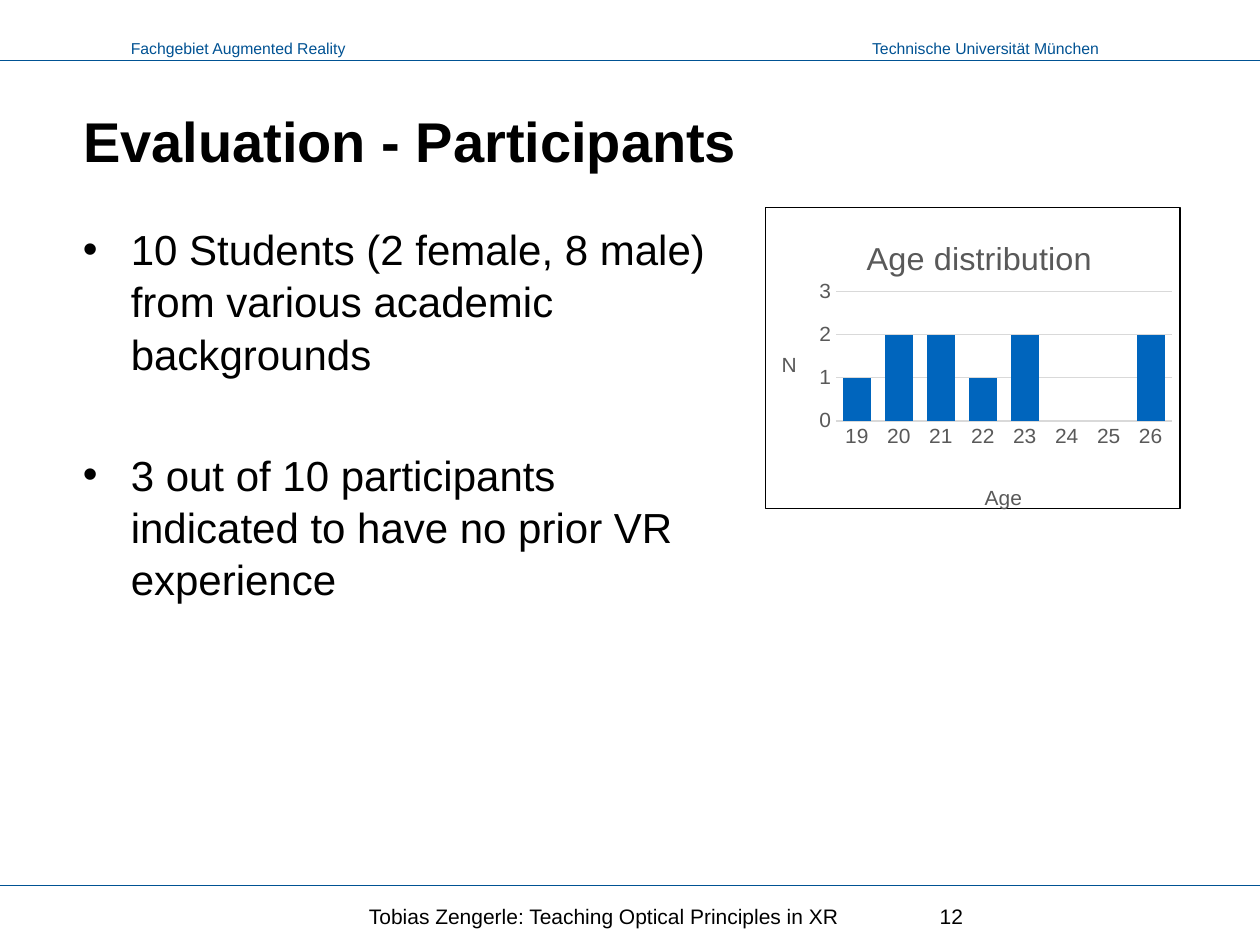
from dataclasses import dataclass

from lxml.etree import SubElement
from pptx import Presentation
from pptx.chart.data import CategoryChartData
from pptx.dml.color import RGBColor
from pptx.enum.chart import XL_CHART_TYPE, XL_TICK_MARK
from pptx.enum.shapes import MSO_CONNECTOR
from pptx.enum.text import MSO_ANCHOR, PP_ALIGN
from pptx.oxml import parse_xml
from pptx.oxml.ns import nsdecls, qn
from pptx.util import Inches, Pt


@dataclass(frozen=True)
class Theme:
    face: str = "Arial"
    ink: str = "000000"
    blue: str = "005293"
    bar: str = "0065BD"
    grey: str = "595959"
    grid: str = "D9D9D9"
    title: float = 32
    body: float = 24
    chart: float = 18.6
    foot: float = 12
    head: float = 9
    thin: float = 0.75


LOOK = Theme()


def style(font, size, color=LOOK.ink, bold=False):
    font.name, font.size, font.bold = LOOK.face, Pt(size), bold
    font.color.rgb = RGBColor.from_string(color)


def rule(line, color):
    line.color.rgb = RGBColor.from_string(color)
    line.width = Pt(LOOK.thin)


def write(slide, text, box, size=LOOK.foot, color=LOOK.ink, wrap=True,
          align=PP_ALIGN.LEFT, anchor=MSO_ANCHOR.TOP, bullet=False, gap=0):
    """Add a text box; each line of text is a paragraph."""
    frame = slide.shapes.add_textbox(*map(Inches, box)).text_frame
    frame.word_wrap, frame.vertical_anchor = wrap, anchor
    frame.text = text
    for count, para in enumerate(frame.paragraphs):
        para.alignment = align
        if bullet:
            props = para._p.get_or_add_pPr()
            props.set("marL", str(Inches(0.38)))
            props.set("indent", str(-Inches(0.38)))
            SubElement(props, qn("a:buFont"), typeface=LOOK.face)
            SubElement(props, qn("a:buChar"), char="•")
            para.line_spacing = 1.04
        if count:
            para.space_before = Pt(gap)
        style(para.font, size, color)


def draw_rule(slide, y):
    line = slide.shapes.add_connector(
        MSO_CONNECTOR.STRAIGHT, 0, Inches(y), Inches(10), Inches(y))
    rule(line.line, LOOK.blue)
    SubElement(line._element.spPr, qn("a:effectLst"))


def place(node, index, **spots):
    """Fix a chart part at fractions of the chart area."""
    old = node.find(qn("c:layout"))
    if old is not None:
        node.remove(old)
    layout = parse_xml(f"<c:layout {nsdecls('c')}/>")
    node.insert(index, layout)
    manual = SubElement(layout, qn("c:manualLayout"))
    if "w" in spots:
        SubElement(manual, qn("c:layoutTarget"), val="inner")
    for key in "xy":
        SubElement(manual, qn(f"c:{key}Mode"), val="edge")
    for key, value in spots.items():
        SubElement(manual, qn(f"c:{key}"), val=str(value))


def label(title, text, size, x, y):
    frame = title.text_frame
    frame.text = text
    style(frame.paragraphs[0].runs[0].font, size, LOOK.grey)
    frame._txBody.bodyPr.set("rot", "0")
    place(title._element, 1, x=x, y=y)


def draw_chart(slide, box):
    data = CategoryChartData()
    data.categories = [str(age) for age in range(19, 27)]
    data.add_series("Series 1", [1, 2, 2, 1, 2, None, None, 2])
    chart = slide.shapes.add_chart(
        XL_CHART_TYPE.COLUMN_CLUSTERED, *map(Inches, box), data).chart
    style(chart.font, 10)
    chart.has_legend = False

    # Bars
    plot = chart.plots[0]
    plot.gap_width, plot.vary_by_categories = 50, False
    fill = plot.series[0].format.fill
    fill.solid()
    fill.fore_color.rgb = RGBColor.from_string(LOOK.bar)

    # Axes
    ages, count = chart.category_axis, chart.value_axis
    for axis in (ages, count):
        axis.major_tick_mark = axis.minor_tick_mark = XL_TICK_MARK.NONE
        style(axis.tick_labels.font, LOOK.foot, LOOK.grey)
    rule(ages.format.line, LOOK.grid)
    count.format.line.fill.background()
    count.minimum_scale, count.maximum_scale, count.major_unit = 0, 3, 1
    count.has_major_gridlines = True
    rule(count.major_gridlines.format.line, LOOK.grid)

    # Titles and plot position
    label(chart.chart_title, "Age distribution", LOOK.chart, 0.23, 0.08)
    label(ages.axis_title, "Age", LOOK.foot, 0.52, 0.91)
    label(count.axis_title, "N", LOOK.foot, 0.03, 0.47)
    root = chart._chartSpace
    place(root.chart.plotArea, 0, x=0.17, y=0.28, w=0.81, h=0.43)

    # Frame
    root.chart.addnext(parse_xml(
        f"<c:spPr {nsdecls('c', 'a')}><a:noFill/>"
        f'<a:ln w="{Pt(LOOK.thin)}"><a:solidFill>'
        f'<a:srgbClr val="{LOOK.ink}"/></a:solidFill></a:ln></c:spPr>'))


def set_title(slide, text, box):
    title = slide.shapes.title
    title.left, title.top, title.width, title.height = map(Inches, box)
    frame = title.text_frame
    frame.text, frame.vertical_anchor = text, MSO_ANCHOR.BOTTOM
    para = frame.paragraphs[0]
    para.alignment = PP_ALIGN.LEFT
    style(para.font, LOOK.title, bold=True)


def main():
    deck = Presentation()
    deck.slide_width, deck.slide_height = Inches(10), Inches(7.5)
    slide = deck.slides.add_slide(deck.slide_layouts[5])

    # Header and rules
    for text, box in (
            ("Technische Universität München", (6.81, 0.26, 2.01, 0.25)),
            ("Fachgebiet Augmented Reality", (0.91, 0.26, 1.93, 0.25))):
        write(slide, text, box, size=LOOK.head, color=LOOK.blue,
              wrap=False, align=PP_ALIGN.RIGHT)
    for y in (0.48, 7.03):
        draw_rule(slide, y)

    # Title, points and chart
    set_title(slide, "Evaluation - Participants", (0.56, 0.76, 8.89, 0.67))
    write(slide,
          "10 Students (2 female, 8 male) from various academic backgrounds\n"
          "3 out of 10 participants indicated to have no prior VR experience",
          (0.56, 1.71, 5.22, 5.04), size=LOOK.body, bullet=True, gap=39)
    draw_chart(slide, (6.07, 1.64, 3.3, 2.45))

    # Footer
    for text, left, width in (
            ("Tobias Zengerle: Teaching Optical Principles in XR", 2.83, 4.33),
            ("12", 7.36, 2.08)):
        write(slide, text, (left, 7.11, width, 0.33),
              anchor=MSO_ANCHOR.MIDDLE)

    deck.save("out.pptx")


if __name__ == "__main__":
    main()
